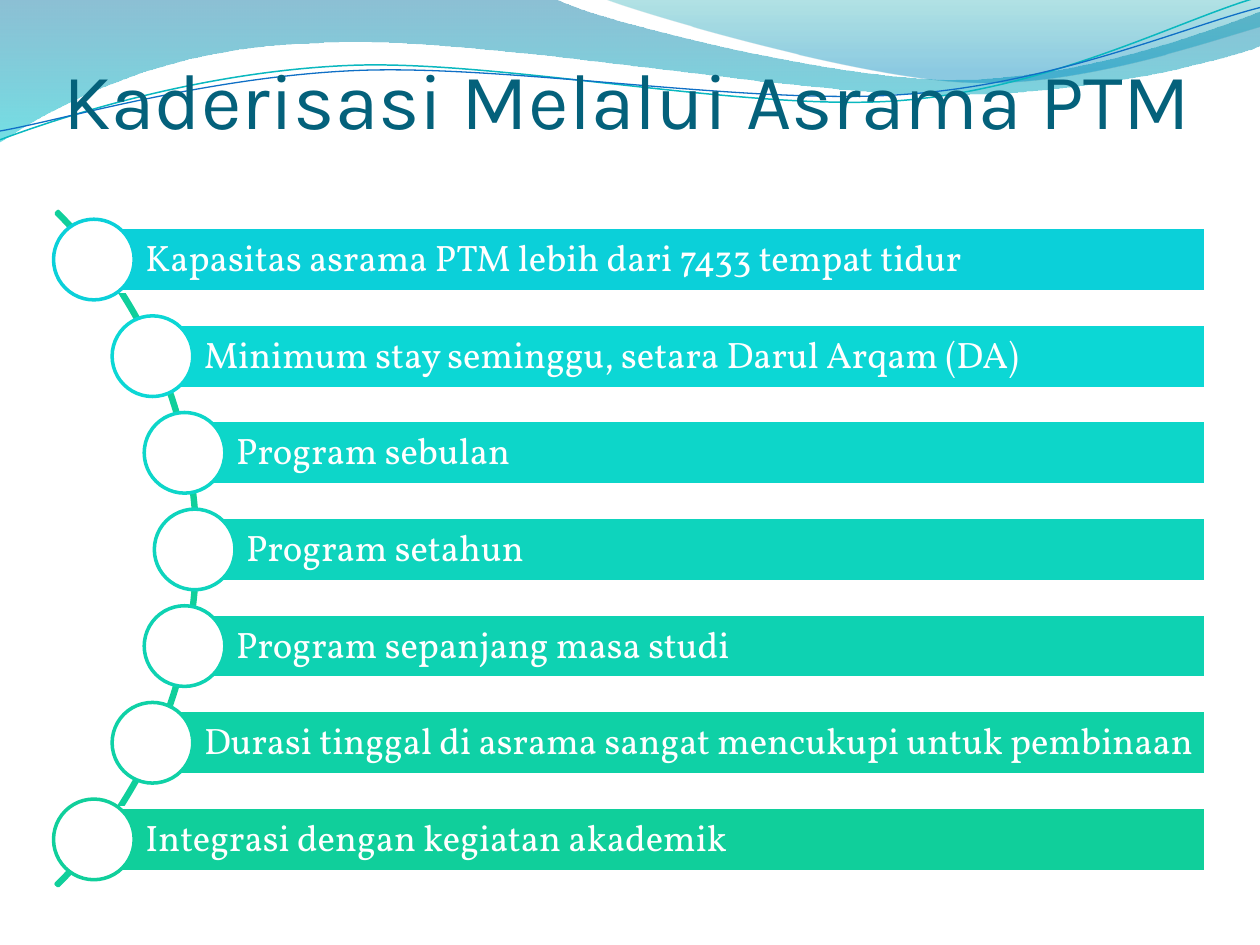
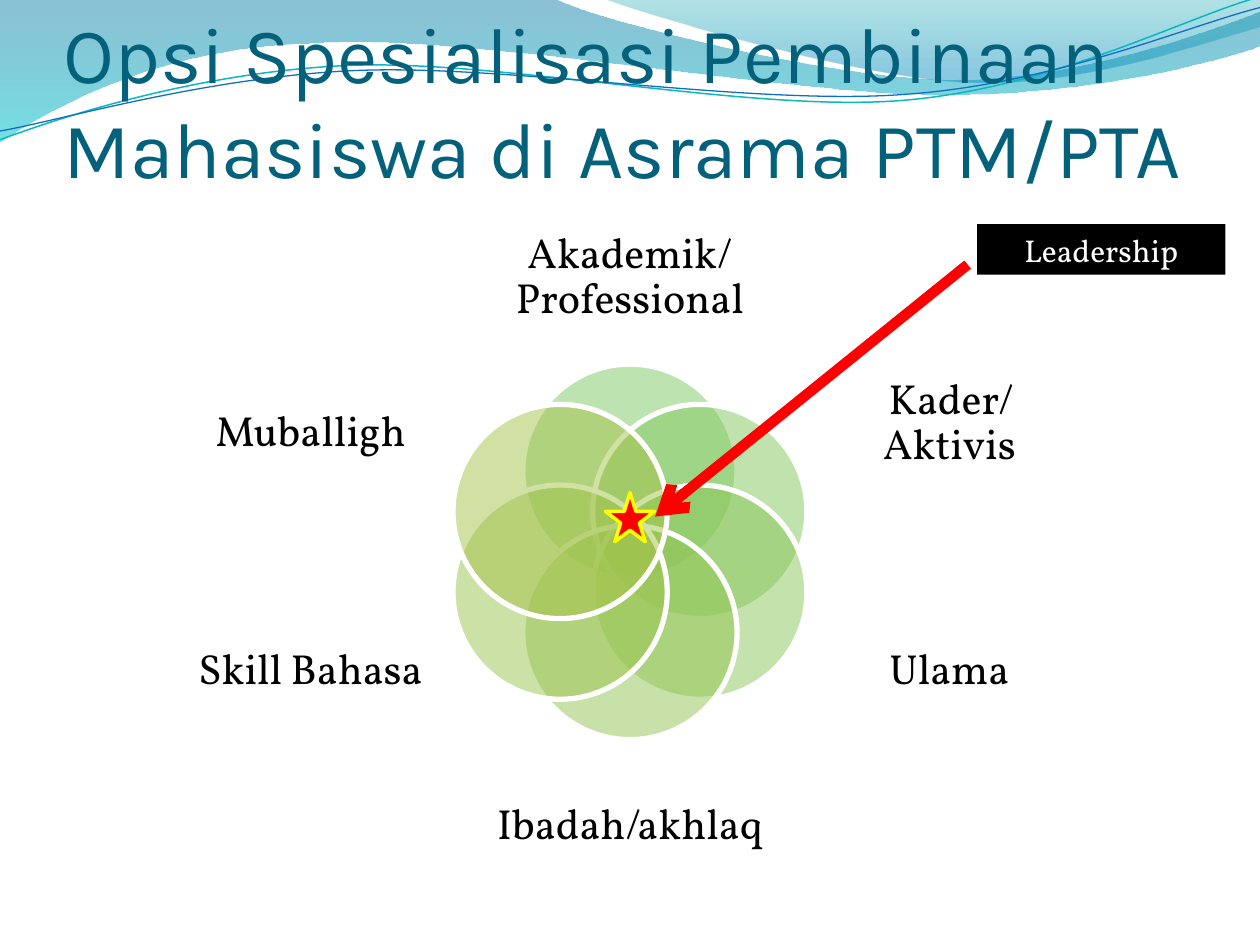
import math
import pptx
import pptx.util
import pptx.dml.color
import pptx.enum.shapes
import pptx.enum.text
import pptx.oxml
import pptx.oxml.ns
import lxml.etree

RGB = pptx.dml.color.RGBColor.from_string
SHAPE = pptx.enum.shapes.MSO_SHAPE
ALIGN = pptx.enum.text.PP_ALIGN
ANCHOR = pptx.enum.text.MSO_ANCHOR
qn = pptx.oxml.ns.qn


class Theme:
    title_font, body_font = "Karla", "Vollkorn"
    title_size, label_size, bar_size, tag_size = 45, 24, 21, 18
    title, white, black = "04617B", "FFFFFF", "000000"
    red, yellow = "FF0000", "FFFF00"
    band_stops = [(0, "0074A1", 45), (1, "00C6CF", 55)]
    corner_stops = [(0, "00A1A9", 30), (0.8, "008BBF", 45)]
    teal_line, blue_line = ("0AB8BF", 0.85), ("0F6FC6", 0.75)
    bars = ["0BD0D9", "0CD7D5", "0DD6C9", "0ED4BD", "0ED2B2", "0FD1A6", "10CF9B"]
    petals = ["7CCA62", "83C85D", "8AC758", "93C553", "9BC44E", "A5C249"]


prs = pptx.Presentation()
prs.slide_width = pptx.util.Inches(10)
prs.slide_height = pptx.util.Inches(7.5)
COL = prs.slide_width / 100
ROW = prs.slide_height / 75


def set_alpha(sp, shares):
    colours = sp._element.spPr.iter(qn("a:srgbClr"))
    for clr, share in zip(list(colours), shares):
        lxml.etree.SubElement(clr, qn("a:alpha")).set("val", str(share * 1000))


def put(s, text, box, kind=None, fill=None, line=None, width=2, font=Theme.body_font,
        size=Theme.label_size, color=Theme.black, align=ALIGN.CENTER,
        anchor=ANCHOR.MIDDLE, inset=(0, 0, 0, 0), spacing=None):
    x, y, w, h = box
    place = [round(v) for v in (x * COL, y * ROW, w * COL, h * ROW)]
    if kind is None:
        sp = s.shapes.add_textbox(*place)
    else:
        sp = s.shapes.add_shape(kind, *place)
        sp.shadow.inherit = False
    if fill:
        sp.fill.solid()
        sp.fill.fore_color.rgb = RGB(fill)
    else:
        sp.fill.background()
    if line:
        sp.line.color.rgb = RGB(line)
        sp.line.width = pptx.util.Pt(width)
    else:
        sp.line.fill.background()
    if text:
        tf = sp.text_frame
        tf.word_wrap = True
        tf.vertical_anchor = anchor
        tf.margin_left, tf.margin_top, tf.margin_right, tf.margin_bottom = [
            round(v * COL) for v in inset]
        p = tf.paragraphs[0]
        p.text = text
        p.alignment = align
        p.line_spacing = spacing
        for r in p.runs:
            r.font.name = font
            r.font.size = pptx.util.Pt(size)
            r.font.color.rgb = RGB(color)
    return sp


waves = [
    ([(0, 0), (44, -0.1), (47.6, 1.7, 66.4, 6.3, 75.8, 6.3),
      (85.3, 6.3, 95.8, 2.6, 100, 0.9), (100.1, 3.6),
      (98.3, 4.4, 87, 7.6, 74.6, 7.5), (62.2, 7.5, 38.2, 2.8, 25.7, 3.4),
      (12.9, 3.6, 4.6, 8.3, -0.1, 11.3)], Theme.band_stops, None),
    ([(47.9, -0.1), (50.9, 1.1, 68.2, 6.2, 76.9, 6.5),
      (85.6, 6.9, 96.1, 3.2, 100, 2.1), (100, 0)], Theme.corner_stops, None),
    ([(0, 11.1), (4.8, 9.3, 15.8, 5.7, 27.7, 5.2),
      (39.5, 4.7, 59.3, 8.9, 71.3, 8), (83.3, 7.1, 93.8, 1.5, 99.8, -0.2)],
     None, Theme.teal_line),
    ([(0, 10.4), (4.7, 9.6, 16.4, 6.1, 28.3, 5.6),
      (40.3, 5.1, 59.7, 8.4, 71.7, 7.5), (83.6, 6.7, 94.1, 2.1, 100, 0.6)],
     None, Theme.blue_line),
]
titles = [
    ("Kaderisasi Melalui Asrama PTM", (5.05, 2.1, 90, 9.4)),
    ("Opsi Spesialisasi Pembinaan Mahasiswa di Asrama PTM/PTA", (5.05, 4.4, 90, 11)),
]
for title, box in titles:
    s = prs.slides.add_slide(prs.slide_layouts[6])
    for outline, stops, line in waves:
        points = [(round(x * COL), round(y * ROW))
                  for seg in outline for x, y in zip(seg[::2], seg[1::2])]
        builder = s.shapes.build_freeform(*points[0], scale=1.0)
        builder.add_line_segments(points[1:], close=bool(stops))
        sp = builder.convert_to_shape()
        sp.shadow.inherit = False
        straight = iter(list(sp._element.spPr.iter(qn("a:lnTo"))))
        for seg in outline[1:]:
            first = next(straight)
            if len(seg) == 6:
                first.addprevious(curve := pptx.oxml.parse_xml(
                    '<a:cubicBezTo xmlns:a="%s"/>' % pptx.oxml.ns.nsdecls("a").split('"')[1]))
                for step in (first, next(straight), next(straight)):
                    curve.append(step[0])
                    step.getparent().remove(step)
        if stops:
            sp.line.fill.background()
            sp.fill.gradient()
            sp.fill.gradient_angle = 270
            for stop, (position, colour, _) in zip(sp.fill.gradient_stops, stops):
                stop.position = position
                stop.color.rgb = RGB(colour)
            set_alpha(sp, [share for _, _, share in stops])
        else:
            sp.fill.background()
            sp.line.color.rgb = RGB(line[0])
            sp.line.width = pptx.util.Pt(line[1])
    put(s, title, box, font=Theme.title_font, size=Theme.title_size, color=Theme.title,
        align=ALIGN.LEFT, anchor=ANCHOR.BOTTOM, inset=(0, 0.5, 0, 0))

s = prs.slides[0]
arc = put(s, "", (-60, 5.7, 75.7, 75.7), SHAPE.BLOCK_ARC, line=Theme.bars[-1])
for i, value in enumerate((189, 27, 0.003)):
    arc.adjustments[i] = value

points = [
    "Kapasitas asrama PTM lebih dari 7433 tempat tidur",
    "Minimum stay seminggu, setara Darul Arqam (DA)",
    "Program sebulan",
    "Program setahun",
    "Program sepanjang masa studi",
    "Durasi tinggal di asrama sangat mencukupi untuk pembinaan",
    "Integrasi dengan kegiatan akademik",
]
indents = [7.45, 12.1, 14.65, 15.45, 14.65, 12.1, 7.45]
bar_right, bar_h, dot = 95.7, 5.1, 6.4
for i, (text, left, colour) in enumerate(zip(points, indents, Theme.bars)):
    middle = 20.6 + i * 7.67
    put(s, text, (left, middle - bar_h / 2, bar_right - left, bar_h), SHAPE.RECTANGLE,
        fill=colour, line=Theme.white, size=Theme.bar_size, color=Theme.white,
        align=ALIGN.LEFT, inset=(4.1, 0.6, 0.6, 0.6), spacing=0.9)
    put(s, "", (left - dot / 2, middle - dot / 2, dot, dot), SHAPE.OVAL,
        fill=Theme.white, line=colour)

s = prs.slides[1]
labels = [
    ("Akademik/\nProfessional", (39.35, 16.2, 21.3, 11.6)),
    ("Kader/Aktivis", (65.3, 27.25, 20.1, 12.7)),
    ("Ulama", (65.3, 46.15, 20.1, 14.2)),
    ("Ibadah/akhlaq", (39.35, 59.75, 21.3, 11.6)),
    ("Skill Bahasa", (14.6, 46.15, 20.1, 14.2)),
    ("Muballigh", (14.6, 27.25, 20.1, 14.2)),
]
petal, orbit, centre_x, centre_y = 17, 6.4, 50, 43.8
for i, ((text, box), colour) in enumerate(zip(labels, Theme.petals)):
    angle = math.radians(60 * i)
    x = centre_x + orbit * math.sin(angle) - petal / 2
    y = centre_y - orbit * math.cos(angle) - petal / 2
    sp = put(s, "", (x, y, petal, petal), SHAPE.OVAL, fill=colour,
             line=Theme.white, width=3)
    set_alpha(sp, [50])
    put(s, text, box, spacing=0.9)

put(s, "", (48.05, 39.1, 3.9, 3.9), SHAPE.STAR_5_POINT, fill=Theme.red, line=Theme.yellow)
arrow = s.shapes.add_connector(
    pptx.enum.shapes.MSO_CONNECTOR.STRAIGHT,
    round(52 * COL), round(41 * ROW), round(76.8 * COL), round(21 * ROW))
arrow.line.color.rgb = RGB(Theme.red)
arrow.line.width = pptx.util.Pt(6)
lxml.etree.SubElement(arrow.line._get_or_add_ln(), qn("a:headEnd")).set("type", "arrow")
lxml.etree.SubElement(arrow._element.spPr, qn("a:effectLst"))
put(s, "Leadership", (77.55, 17.8, 19.7, 4), SHAPE.RECTANGLE, fill=Theme.black,
    size=Theme.tag_size, color=Theme.white, inset=(1, 0.5, 1, 0.5))

prs.save("out.pptx")
